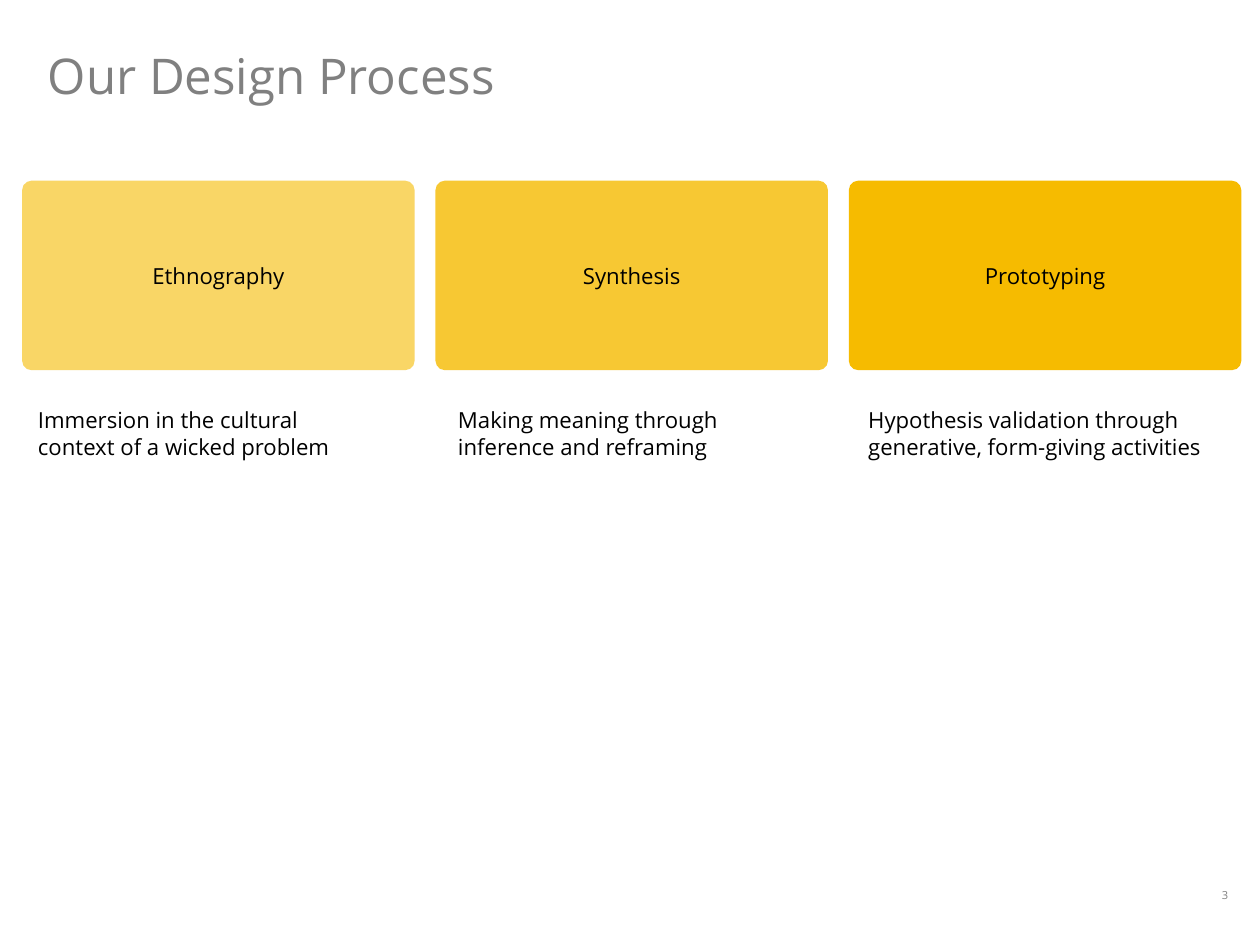
import pptx
import pptx.util
import pptx.dml.color
import pptx.enum.shapes
import pptx.enum.text
import lxml.etree
from pptx.util import Inches

TITLE = "Our Design Process"
PAGE_NUMBER = "3"
STAGES = [
    {"name": "Ethnography", "opacity": 60, "note_left": 0.33,
     "note": "Immersion in the cultural context of a wicked problem"},
    {"name": "Synthesis", "opacity": 80, "note_left": 5.07,
     "note": "Making meaning through inference and reframing"},
    {"name": "Prototyping", "opacity": 100, "note_left": 9.7,
     "note": "Hypothesis validation through generative, form-giving activities"},
]

THEME = {
    "font": "Open Sans",
    "gold": "F6BB00",
    "black": "000000",
    "gray": "808080",
    "title_size": 40,
    "body_size": 18,
    "page_size": 9,
}

CARD_LEFT, CARD_TOP, CARD_WIDTH, CARD_HEIGHT = 0.25, 2.04, 4.43, 2.14
CARD_PITCH = 4.665
CARD_ROUNDING = 0.05
NOTE_TOP, NOTE_WIDTH, NOTE_HEIGHT = 4.54, 4.02, 0.71

ALIGN = pptx.enum.text.PP_ALIGN
ANCHOR = pptx.enum.text.MSO_ANCHOR


def apply(target, values):
    for name, value in values.items():
        setattr(target, name, value)


def write(shape, text, size, color, align=ALIGN.LEFT, **frame_format):
    frame = shape.text_frame
    apply(frame, {"word_wrap": True, **frame_format})
    paragraph = frame.paragraphs[0]
    paragraph.alignment = align
    run = paragraph.add_run()
    run.text = text
    apply(run.font, {"name": THEME["font"], "size": pptx.util.Pt(THEME[size])})
    run.font.color.rgb = pptx.dml.color.RGBColor.from_string(THEME[color])


def add_text(slide, box, *content, **frame_format):
    shape = slide.shapes.add_textbox(*map(Inches, box))
    write(shape, *content, **frame_format)


def add_card(slide, index, stage):
    box = (CARD_LEFT + index * CARD_PITCH, CARD_TOP, CARD_WIDTH, CARD_HEIGHT)
    card = slide.shapes.add_shape(
        pptx.enum.shapes.MSO_SHAPE.ROUNDED_RECTANGLE, *map(Inches, box))
    card.adjustments[0] = CARD_ROUNDING
    card.shadow.inherit = False
    card.line.fill.background()
    card.fill.solid()
    card.fill.fore_color.rgb = pptx.dml.color.RGBColor.from_string(THEME["gold"])
    if stage["opacity"] < 100:
        color = card.fill._xPr.find(".//" + pptx.oxml.ns.qn("a:srgbClr"))
        alpha = lxml.etree.SubElement(color, pptx.oxml.ns.qn("a:alpha"))
        alpha.set("val", str(stage["opacity"] * 1000))
    write(card, stage["name"], "body_size", "black", ALIGN.CENTER,
          vertical_anchor=ANCHOR.MIDDLE)


def main():
    presentation = pptx.Presentation()
    apply(presentation, {"slide_width": Inches(14.22), "slide_height": Inches(10.67)})
    slide = presentation.slides.add_slide(presentation.slide_layouts[6])

    add_text(slide, (0.54, 0.51, 12.67, 0.67), TITLE, "title_size", "gray",
             vertical_anchor=ANCHOR.MIDDLE, margin_left=0, margin_right=0,
             margin_top=0, margin_bottom=0)
    add_text(slide, (13.57, 9.98, 0.51, 0.3), PAGE_NUMBER, "page_size", "gray",
             ALIGN.CENTER)
    for index, stage in enumerate(STAGES):
        add_card(slide, index, stage)
        add_text(slide, (stage["note_left"], NOTE_TOP, NOTE_WIDTH, NOTE_HEIGHT),
                 stage["note"], "body_size", "black")

    presentation.save("out.pptx")


if __name__ == "__main__":
    main()
